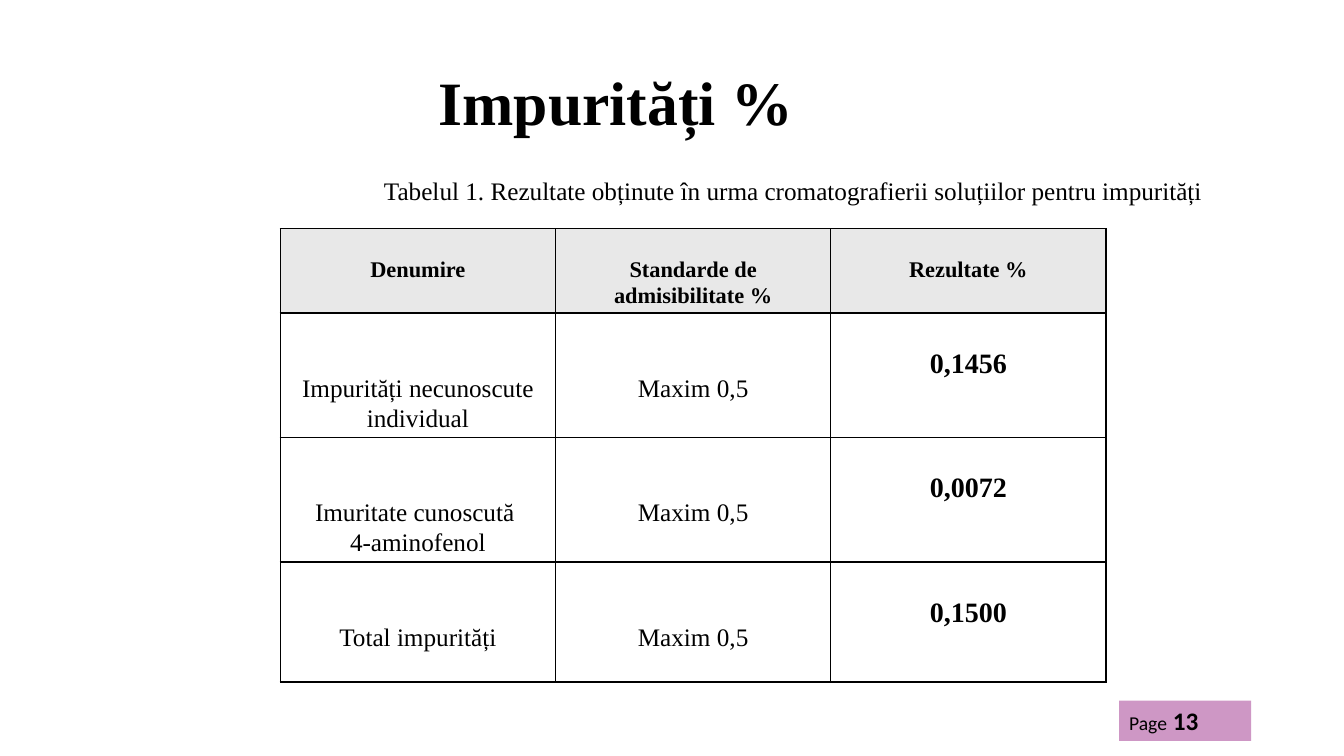
import pptx
import pptx.dml.color
import pptx.enum.shapes
import pptx.enum.text
import pptx.oxml
import pptx.oxml.ns
import pptx.util
from pptx.util import Inches

COLOURS = {"text": "000000", "header": "E8E8E8", "badge": "9F318D", "border": "000000"}
SERIF = "Times New Roman"
SANS = "Calibri"
CENTER = pptx.enum.text.PP_ALIGN.CENTER
MIDDLE = pptx.enum.text.MSO_ANCHOR.MIDDLE
LINE_PER_POINT = 0.0165  # height in inches of a table line, per point of text

HEADERS = ["Denumire", "Standarde de admisibilitate %", "Rezultate %"]
RESULTS = [
    ["Impurități necunoscute individual", "Maxim 0,5", "0,1456"],
    ["Imuritate cunoscută \n4-aminofenol", "Maxim 0,5", "0,0072"],
    ["Total impurități", "Maxim 0,5", "0,1500"],
]


def colour(name):
    return pptx.dml.color.RGBColor.from_string(COLOURS[name])


def add_run(paragraph, text, size, font=SERIF, bold=False):
    run = paragraph.add_run()
    run.text = text
    run.font.name = font
    run.font.size = pptx.util.Pt(size)
    run.font.bold = bold
    run.font.color.rgb = colour("text")


def add_text(slide, left, top, width, height, text, size, bold=False, align=None, spacing=None):
    box = slide.shapes.add_textbox(Inches(left), Inches(top), Inches(width), Inches(height))
    frame = box.text_frame
    frame.word_wrap = True
    frame.vertical_anchor = MIDDLE
    paragraph = frame.paragraphs[0]
    paragraph.alignment = align
    paragraph.line_spacing = spacing
    add_run(paragraph, text, size, bold=bold)


def add_borders(cell):
    properties = cell._tc.get_or_add_tcPr()
    for index, side in enumerate(("lnL", "lnR", "lnT", "lnB")):
        line = pptx.oxml.parse_xml(
            f'<a:{side} {pptx.oxml.ns.nsdecls("a")} w="12700"><a:solidFill>'
            f'<a:srgbClr val="{COLOURS["border"]}"/></a:solidFill></a:{side}>')
        properties.insert(index, line)


def fill_cell(cell, text, size, bold, lines_above, header=False):
    cell.margin_left = cell.margin_right = Inches(0.07)
    cell.margin_top = Inches(lines_above * size * LINE_PER_POINT)
    cell.margin_bottom = 0
    if header:
        cell.fill.solid()
        cell.fill.fore_color.rgb = colour("header")
    else:
        cell.fill.background()
    add_borders(cell)
    for index, line in enumerate(text.split("\n")):
        frame = cell.text_frame
        paragraph = frame.add_paragraph() if index else frame.paragraphs[0]
        paragraph.alignment = CENTER
        paragraph.line_spacing = 1.07
        add_run(paragraph, line, size, bold=bold)


def add_results_table(slide):
    table = slide.shapes.add_table(len(RESULTS) + 1, len(HEADERS), Inches(2.78), Inches(2.27),
                                   Inches(8.19), Inches(4.36)).table
    for column in table.columns:
        column.width = Inches(2.73)
    for index, row in enumerate(table.rows):
        row.height = Inches(1.19 if index else 0.79)

    for column, text in enumerate(HEADERS):
        fill_cell(table.cell(0, column), text, 16, True, 1, header=True)
    for row, values in enumerate(RESULTS, start=1):
        for column, text in enumerate(values):
            is_result = column == len(HEADERS) - 1
            size, lines_above = (20, 1) if is_result else (18, 2)
            fill_cell(table.cell(row, column), text, size, is_result, lines_above)


def add_page_badge(slide, number):
    badge = slide.shapes.add_shape(pptx.enum.shapes.MSO_SHAPE.RECTANGLE, Inches(11.1),
                                   Inches(6.95), Inches(1.31), Inches(0.4))
    badge.shadow.inherit = False
    badge.line.fill.background()
    badge.fill.solid()
    badge.fill.fore_color.rgb = colour("badge")
    # Half-transparent fill
    fill_colour = badge._element.spPr.find(".//" + pptx.oxml.ns.qn("a:srgbClr"))
    fill_colour.append(pptx.oxml.parse_xml(
        f'<a:alpha {pptx.oxml.ns.nsdecls("a")} val="50000"/>'))
    badge.text_frame.vertical_anchor = MIDDLE
    paragraph = badge.text_frame.paragraphs[0]
    paragraph.alignment = pptx.enum.text.PP_ALIGN.LEFT
    add_run(paragraph, "Page", 14, SANS)
    add_run(paragraph, f" {number}", 18, SANS, bold=True)


def main():
    presentation = pptx.Presentation()
    presentation.slide_width = Inches(13.33)
    presentation.slide_height = Inches(7.5)
    slide = presentation.slides.add_slide(presentation.slide_layouts[6])

    # Title
    add_text(slide, 0.36, 0.58, 11.5, 0.94, "Impurități %", 44, bold=True,
             align=CENTER, spacing=0.9)
    # Table, page badge and caption
    add_results_table(slide)
    add_page_badge(slide, 13)
    add_text(slide, 3.71, 1.69, 9.41, 0.4,
             "Tabelul 1. Rezultate obținute în urma cromatografierii soluțiilor pentru impurități", 18)

    presentation.save("out.pptx")


if __name__ == "__main__":
    main()
